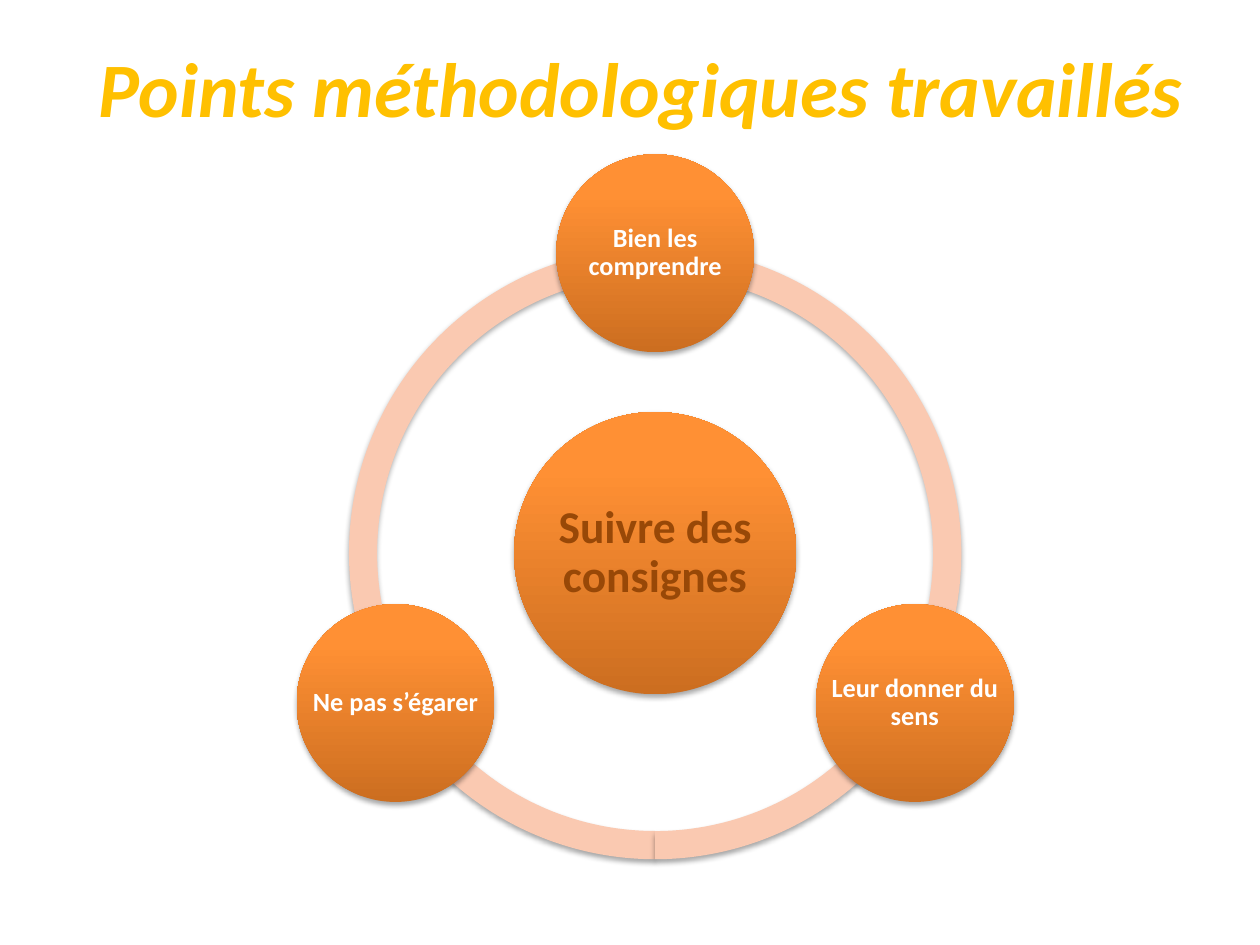
from copy import deepcopy
from dataclasses import dataclass
from math import cos, radians, sin

from lxml.etree import SubElement
from pptx import Presentation
from pptx.dml.color import RGBColor
from pptx.enum.shapes import MSO_SHAPE as Shape
from pptx.enum.text import MSO_ANCHOR as Anchor, PP_ALIGN as Align
from pptx.oxml.ns import qn
from pptx.util import Inches, Pt

COLORS = {
    "title": "FFC000",
    "ring": "FAC9B1",
    "core_text": "984807",
    "node_text": "FFFFFF",
    "shadow": "000000",
}
GRADIENT = [(0, "CC6E20"), (0.8, "FF9034"), (1, "FF9136")]
CENTER_X, CENTER_Y = 5.2, 4.39
ORBIT_RADIUS = 2.38
RING_SIZE = 4.86
RING_THICKNESS = 0.046
ARC_ANGLES = [(90, 162), (18, 90), (162, 18)]


@dataclass
class Disc:
    text: str
    x: float
    y: float
    diameter: float
    size: int
    color: str
    inset: float


def node(text: str, angle: float) -> Disc:
    x = CENTER_X + ORBIT_RADIUS * cos(radians(angle))
    y = CENTER_Y + ORBIT_RADIUS * sin(radians(angle))
    return Disc(text, x, y, 1.57, 15, "node_text", 0.02)


DISCS = [
    Disc("Suivre des consignes", CENTER_X, CENTER_Y, 2.24, 26, "core_text", 0.04),
    node("Bien les comprendre", -90),
    node("Leur donner du sens", 30),
    node("Ne pas s’égarer", 150),
]


def square_at(x: float, y: float, size: float) -> tuple:
    return Inches(x - size / 2), Inches(y - size / 2), Inches(size), Inches(size)


def write_text(shape, text: str, *, size: int, color: str, inset: float = 0.1,
               italic: bool = False, line_spacing: float = 1.0) -> None:
    frame = shape.text_frame
    frame.word_wrap = True
    frame.vertical_anchor = Anchor.MIDDLE
    frame.margin_left = frame.margin_right = Inches(inset)
    frame.margin_top = frame.margin_bottom = Inches(min(inset, 0.05))
    paragraph = frame.paragraphs[0]
    paragraph.alignment = Align.CENTER
    paragraph.line_spacing = line_spacing
    run = paragraph.add_run()
    run.text = text
    run.font.name = "Calibri"
    run.font.size = Pt(size)
    run.font.bold = True
    run.font.italic = italic
    run.font.color.rgb = RGBColor.from_string(COLORS[color])


def finish_outline(shape) -> None:
    shape.line.fill.background()
    shape.shadow.inherit = False
    effects = shape._element.spPr.find(qn("a:effectLst"))
    shadow = SubElement(effects, qn("a:outerShdw"), blurRad=str(Pt(3.1)),
                        dist=str(Pt(1.8)), dir="5400000", rotWithShape="0")
    color = SubElement(shadow, qn("a:srgbClr"), val=COLORS["shadow"])
    SubElement(color, qn("a:alpha"), val="35000")


def fill_gradient(shape) -> None:
    shape.fill.gradient()
    shape.fill.gradient_angle = 90
    stop_list = shape._element.spPr.find(".//" + qn("a:gsLst"))
    stop_list.append(deepcopy(stop_list[-1]))
    for stop, (position, color) in zip(shape.fill.gradient_stops, GRADIENT):
        stop.position = position
        stop.color.rgb = RGBColor.from_string(color)


def draw_arc(slide, start: float, end: float) -> None:
    arc = slide.shapes.add_shape(
        Shape.BLOCK_ARC, *square_at(CENTER_X, CENTER_Y, RING_SIZE))
    arc.adjustments[0] = start * 0.6
    arc.adjustments[1] = end * 0.6
    arc.adjustments[2] = RING_THICKNESS
    arc.fill.solid()
    arc.fill.fore_color.rgb = RGBColor.from_string(COLORS["ring"])
    finish_outline(arc)


def draw_disc(slide, disc: Disc) -> None:
    box = square_at(disc.x, disc.y, disc.diameter)
    circle = slide.shapes.add_shape(Shape.OVAL, *box)
    fill_gradient(circle)
    finish_outline(circle)
    label = slide.shapes.add_textbox(*box)
    write_text(label, disc.text, size=disc.size, color=disc.color,
               inset=disc.inset, line_spacing=0.9)


def main() -> None:
    presentation = Presentation()
    presentation.slide_width = Inches(10)
    presentation.slide_height = Inches(7.5)
    slide = presentation.slides.add_slide(presentation.slide_layouts[5])

    title = slide.shapes.title
    title.left, title.top = Inches(0.59), Inches(0.21)
    title.width, title.height = Inches(9), Inches(0.95)
    write_text(title, "Points méthodologiques travaillés", size=44,
               color="title", italic=True)

    for start, end in ARC_ANGLES:
        draw_arc(slide, start, end)
    for disc in DISCS:
        draw_disc(slide, disc)

    presentation.save("out.pptx")


if __name__ == "__main__":
    main()
